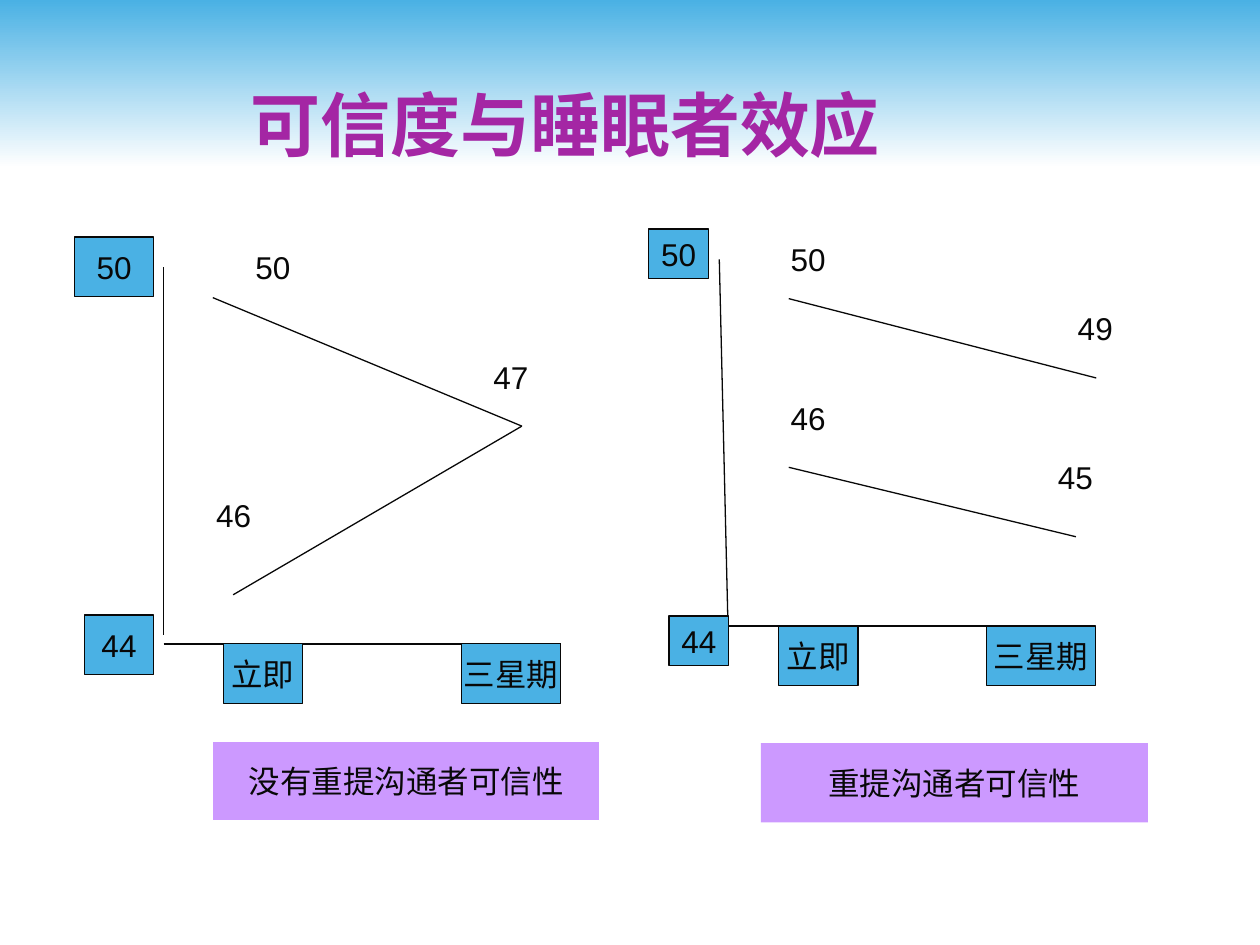
from pptx import Presentation
from pptx.dml.color import RGBColor
from pptx.enum.shapes import MSO_CONNECTOR, MSO_SHAPE
from pptx.enum.text import MSO_ANCHOR, PP_ALIGN
from pptx.oxml.ns import qn
from pptx.util import Cm, Pt
from lxml import etree

COLORS = {
    "ink": "080808",
    "blue": "4AB1E4",
    "violet": "CC99FF",
    "purple": "A426A4",
    "white": "FFFFFF",
}
LABEL_SIZE = (1.6, 1.2)
CAPTION_SIZE = (7.8, 1.6)

# Positions are in centimetres from the top left corner of each panel.
LEFT_PANEL = {
    "axes": [(1.8, 0.61, 1.8, 8.03), (1.8, 8.2, 9.8, 8.2)],
    "trends": [(2.79, 1.22, 9.02, 3.81), (3.2, 7.21, 9.02, 3.81)],
    "ticks": [
        ("44", 0.2, 7.62, 1.4, 1.2),
        ("50", 0, 0, 1.6, 1.2),
        ("立即", 3, 8.2, 1.6, 1.2),
        ("三星期", 7.8, 8.2, 2, 1.2),
    ],
    "values": [("50", 3.2, 0), ("47", 8, 2.21), ("46", 2.41, 5)],
    "caption": ("没有重提沟通者可信性", 2.79, 10.16),
    "caption_line": "white",
}
RIGHT_PANEL = {
    "axes": [(1.42, 0.61, 1.6, 8.2), (1.6, 8, 8.41, 8)],
    "trends": [(2.82, 1.4, 9.02, 3), (2.82, 4.8, 8.61, 6.2)],
    "ticks": [
        ("44", 0.41, 7.8, 1.2, 1),
        ("50", 0, 0, 1.2, 1),
        ("立即", 2.62, 8, 1.6, 1.2),
        ("三星期", 6.81, 8, 2.2, 1.2),
    ],
    "values": [("50", 2.41, 0), ("49", 8.2, 1.4), ("46", 2.41, 3.2), ("45", 7.8, 4.4)],
    "caption": ("重提沟通者可信性", 2.26, 10.36),
    "caption_line": None,
}


def color(name):
    return RGBColor.from_string(COLORS[name])


def write_text(shape, text, size=18, ink="ink", bold=False, anchor=MSO_ANCHOR.MIDDLE):
    frame = shape.text_frame
    frame.word_wrap = False
    frame.vertical_anchor = anchor
    paragraph = frame.paragraphs[0]
    paragraph.alignment = PP_ALIGN.CENTER
    run = paragraph.add_run()
    run.text = text
    run.font.name = "Arial"
    run.font.size = Pt(size)
    run.font.bold = bold
    run.font.color.rgb = color(ink)


def add_label(slide, text, left, top, width, height, **text_format):
    box = slide.shapes.add_textbox(Cm(left), Cm(top), Cm(width), Cm(height))
    write_text(box, text, **text_format)


def add_box(slide, text, left, top, width, height, fill="blue", line="ink"):
    shape = slide.shapes.add_shape(
        MSO_SHAPE.RECTANGLE, Cm(left), Cm(top), Cm(width), Cm(height)
    )
    shape.shadow.inherit = False
    shape.fill.solid()
    shape.fill.fore_color.rgb = color(fill)
    if line:
        shape.line.color.rgb = color(line)
        shape.line.width = Pt(0.75)
    else:
        shape.line.fill.background()
    write_text(shape, text)


def add_line(slide, start_x, start_y, end_x, end_y):
    connector = slide.shapes.add_connector(
        MSO_CONNECTOR.STRAIGHT, Cm(start_x), Cm(start_y), Cm(end_x), Cm(end_y)
    )
    connector.line.color.rgb = color("ink")
    connector.line.width = Pt(0.75)
    properties = connector._element.find(qn("p:spPr"))
    etree.SubElement(properties, qn("a:effectLst"))


def add_header(slide, width, height):
    band = slide.shapes.add_shape(MSO_SHAPE.RECTANGLE, 0, 0, Cm(width), Cm(height))
    band.shadow.inherit = False
    band.line.fill.background()
    band.fill.gradient()
    band.fill.gradient_angle = 270
    for stop, name in zip(band.fill.gradient_stops, ("blue", "white")):
        stop.color.rgb = color(name)


def add_panel(slide, panel, left, top):
    """Draw one hand-built line diagram with its axes, values and caption."""
    for x1, y1, x2, y2 in panel["axes"] + panel["trends"]:
        add_line(slide, left + x1, top + y1, left + x2, top + y2)
    for text, x, y, width, height in panel["ticks"]:
        add_box(slide, text, left + x, top + y, width, height)
    for text, x, y in panel["values"]:
        add_label(slide, text, left + x, top + y, *LABEL_SIZE)
    text, x, y = panel["caption"]
    add_box(slide, text, left + x, top + y, *CAPTION_SIZE,
            fill="violet", line=panel["caption_line"])


def main():
    presentation = Presentation()
    presentation.slide_width = Cm(25.4)
    presentation.slide_height = Cm(19.05)
    slide = presentation.slides.add_slide(presentation.slide_layouts[6])
    add_header(slide, 25.4, 3.38)
    add_panel(slide, RIGHT_PANEL, 13.08, 4.62)
    add_panel(slide, LEFT_PANEL, 1.5, 4.78)
    add_label(slide, "可信度与睡眠者效应", 4.7, 1.52, 13.39, 1.96,
              size=40, ink="purple", bold=True, anchor=MSO_ANCHOR.TOP)
    presentation.save("out.pptx")


if __name__ == "__main__":
    main()
